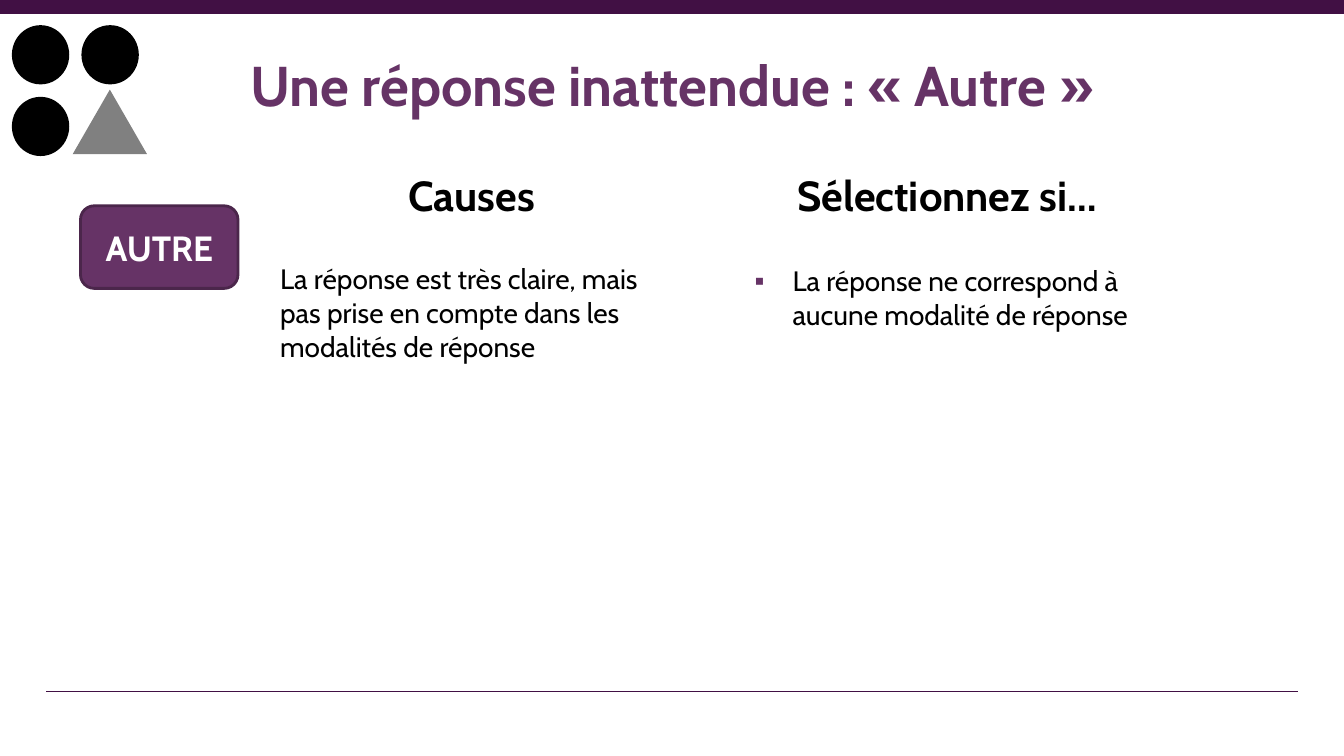
"""Build the slide on the unexpected answer "Autre"."""
from typing import NamedTuple, Optional

from lxml import etree
from pptx import Presentation
from pptx.dml.color import RGBColor
from pptx.enum.shapes import MSO_CONNECTOR, MSO_SHAPE
from pptx.enum.text import MSO_ANCHOR, PP_ALIGN
from pptx.oxml.ns import qn
from pptx.util import Pt

FONT = "Cabin"
PURPLE = RGBColor(0x66, 0x33, 0x66)
DARK = RGBColor(0x41, 0x10, 0x44)
EDGE = RGBColor(0x4B, 0x26, 0x4B)
BLACK = RGBColor(0, 0, 0)
GREY = RGBColor(0x80, 0x80, 0x80)
WHITE = RGBColor(0xFF, 0xFF, 0xFF)
OVAL = MSO_SHAPE.OVAL
PEAK = MSO_SHAPE.ISOSCELES_TRIANGLE
ROUND = MSO_SHAPE.ROUNDED_RECTANGLE
LINE = MSO_CONNECTOR.STRAIGHT
LEFT, MID = PP_ALIGN.LEFT, PP_ALIGN.CENTER
TOP, CORE = MSO_ANCHOR.TOP, MSO_ANCHOR.MIDDLE
INDENT = 27


class Rule(NamedTuple):
    start: float
    end: float
    y: float
    width: float


class Form(NamedTuple):
    kind: int
    x: float
    y: float
    w: float
    h: float
    fill: RGBColor
    edge: Optional[RGBColor] = None


class Label(NamedTuple):
    text: str
    x: float
    y: float
    w: float
    h: float
    size: float
    color: RGBColor = BLACK
    bold: bool = False
    align: int = LEFT
    bullet: bool = False
    inset: float = 3.6


RULES = [Rule(33, 927.5, 494, 1.25), Rule(0, 960, 5, 10.25)]
DOTS = [Form(OVAL, 8.5 + 49.7 * col, 18 + 51.2 * row, 41, 42.3, BLACK)
        for col, row in ((0, 0), (1, 0), (0, 1))]
FORMS = DOTS + [Form(PEAK, 52, 64, 53, 46, GREY)]
BADGE = Form(ROUND, 57.5, 147, 112.5, 59, PURPLE, EDGE)
LABELS = [
    Label("Une réponse inattendue : «\u00a0Autre\u00a0»".replace("\u00a0", chr(160)),
          129.5, 30.3, 700.5, 68.4, 40, PURPLE, True, MID, inset=5.8),
    Label("Causes", 257, 117.4, 160, 44, 30, bold=True, align=MID),
    Label("La réponse est très claire, mais pas prise en compte "
          "dans les modalités de réponse", 193, 183.6, 289, 80, 20),
    Label("Sélectionnez si…", 528.5, 117.4, 296.5, 44, 30, bold=True, align=MID),
    Label("La réponse ne correspond à aucune modalité de réponse",
          532, 185, 289, 80, 20, bullet=True),
]


def draw_rule(slide, rule: Rule) -> None:
    line = slide.shapes.add_connector(
        LINE, Pt(rule.start), Pt(rule.y), Pt(rule.end), Pt(rule.y))
    line.line.color.rgb = DARK
    line.line.width = Pt(rule.width)
    etree.SubElement(line._element.spPr, qn("a:effectLst"))


def draw_form(slide, form: Form):
    shape = slide.shapes.add_shape(
        form.kind, Pt(form.x), Pt(form.y), Pt(form.w), Pt(form.h))
    shape.shadow.inherit = False
    shape.fill.solid()
    shape.fill.fore_color.rgb = form.fill
    if form.edge is None:
        shape.line.fill.background()
    else:
        shape.line.color.rgb = form.edge
        shape.line.width = Pt(2)
    return shape


def add_bullet(para) -> None:
    props = para._p.get_or_add_pPr()
    props.set("marL", str(Pt(INDENT)))
    props.set("indent", str(-Pt(INDENT)))
    color = etree.SubElement(props, qn("a:buClr"))
    etree.SubElement(color, qn("a:srgbClr"), val=str(PURPLE))
    etree.SubElement(props, qn("a:buFont"), typeface="Arial")
    etree.SubElement(props, qn("a:buChar"), char="▪")


def write(frame, text: str, size: float, color: RGBColor, bold: bool,
          align: int, bullet: bool = False) -> None:
    frame.word_wrap = True
    para = frame.paragraphs[0]
    para.text = text
    para.alignment = align
    if bullet:
        add_bullet(para)
    font = para.font
    font.name, font.size, font.bold = FONT, Pt(size), bold
    font.color.rgb = color


def draw_label(slide, label: Label) -> None:
    box = slide.shapes.add_textbox(
        Pt(label.x), Pt(label.y), Pt(label.w), Pt(label.h))
    frame = box.text_frame
    frame.vertical_anchor = TOP
    frame.margin_top = Pt(label.inset)
    write(frame, label.text, label.size, label.color, label.bold,
          label.align, label.bullet)


def main() -> None:
    deck = Presentation()
    deck.slide_width, deck.slide_height = Pt(960), Pt(540)
    slide = deck.slides.add_slide(deck.slide_layouts[6])
    for rule in RULES:
        draw_rule(slide, rule)
    for form in FORMS:
        draw_form(slide, form)
    badge = draw_form(slide, BADGE).text_frame
    badge.vertical_anchor = CORE
    write(badge, "AUTRE", 25, WHITE, True, MID)
    for label in LABELS:
        draw_label(slide, label)
    deck.save("out.pptx")


if __name__ == "__main__":
    main()
